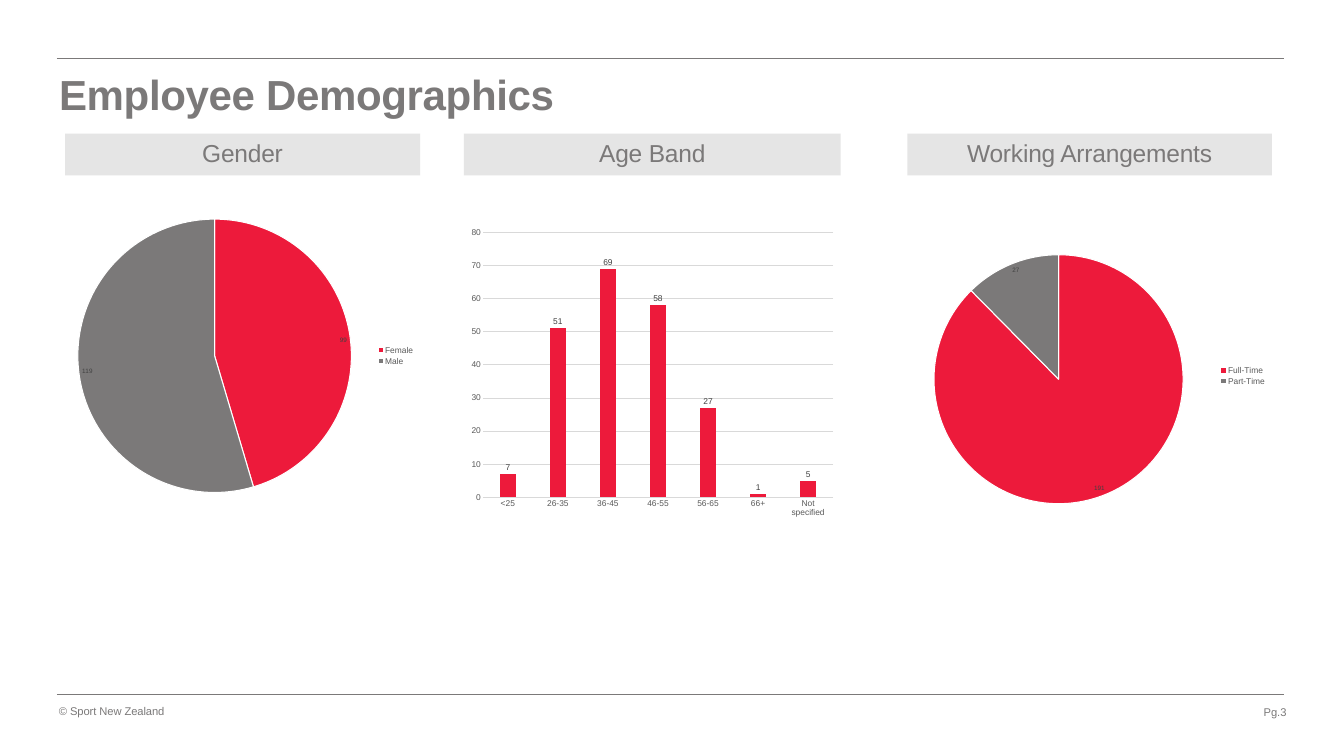
from pptx import Presentation
from pptx.chart.data import CategoryChartData
from pptx.dml.color import RGBColor
from pptx.enum.chart import XL_CHART_TYPE as Chart, XL_LABEL_POSITION as LabelAt
from pptx.enum.chart import XL_LEGEND_POSITION as LegendAt, XL_TICK_MARK as Tick
from pptx.enum.shapes import MSO_CONNECTOR as Connector, MSO_SHAPE as Shape
from pptx.enum.text import MSO_ANCHOR as Anchor, MSO_AUTO_SIZE as AutoSize, PP_ALIGN as Align
from pptx.oxml import parse_xml
from pptx.oxml.ns import nsdecls, qn
from pptx.util import Inches, Pt

GREY, RED, BAND, RULE = "7B7979", "ED1A3B", "E5E5E5", "D9D9D9"
AXIS_TEXT, LABEL_TEXT, WHITE = "595959", "404040", "FFFFFF"


def paint(target, color, width=None):
    """Colour a font, or a fill or line; a width applies to lines."""
    if hasattr(target, "solid"):
        target.solid()
        target.fore_color.rgb = RGBColor.from_string(color)
    else:
        target.color.rgb = RGBColor.from_string(color)
    if width:
        target.width = Pt(width)


def write(frame, text, size, bold=False, align=Align.LEFT, tracking=0,
          line=None, after=None, anchor=Anchor.TOP):
    """Put one formatted paragraph in a text frame."""
    frame.word_wrap = True
    frame.auto_size = AutoSize.NONE
    frame.vertical_anchor = anchor
    paragraph = frame.paragraphs[0]
    paragraph.alignment = align
    paragraph.line_spacing = line
    paragraph.space_after = after
    run = paragraph.add_run()
    run.text = text
    run.font.name, run.font.size, run.font.bold = "Arial", Pt(size), bold
    paint(run.font, GREY)
    if tracking:
        run._r.get_or_add_rPr().set("spc", str(tracking))


deck = Presentation()
deck.slide_width, deck.slide_height = Inches(26.65), Inches(15)
slide = deck.slides.add_slide(deck.slide_layouts[5])
shapes = slide.shapes

# Page margins and the three content columns (left, width)
margin, rule_left, rule_right = 1.07, 1.13, 25.46
columns = [(1.29, 7.04), (9.2, 7.47), (17.99, 7.23)]
heading_top, heading_height = 2.65, 0.83

# Rules above the title and above the footer
for rule_y in (1.15, 13.78):
    rule = shapes.add_connector(Connector.STRAIGHT, Inches(rule_left), Inches(rule_y),
                                Inches(rule_right), Inches(rule_y))
    paint(rule.line, GREY, 0.5)
    rule._element.spPr.append(parse_xml(f"<a:effectLst {nsdecls('a')}/>"))

# Title
title = shapes.title
title.left, title.top, title.width, title.height = map(Inches, (margin, 1.13, 13.21, 1.58))
write(title.text_frame, "Employee Demographics", 60, bold=True, tracking=-50,
      line=0.9, anchor=Anchor.MIDDLE)

# Footer
for text, left, top, width, align, tracking in [
        ("© Sport New Zealand", margin, 13.93, 2.45, Align.LEFT, -10),
        ("Pg.3", 24.6, 13.95, 1.01, Align.RIGHT, 0)]:
    footer = shapes.add_textbox(Inches(left), Inches(top), Inches(width), Inches(0.45))
    write(footer.text_frame, text, 16, align=align, tracking=tracking)

# Column headings
for heading, (left, width) in zip(("Gender", "Age Band", "Working Arrangements"), columns):
    band = shapes.add_shape(Shape.RECTANGLE, Inches(left), Inches(heading_top),
                            Inches(width), Inches(heading_height))
    band.shadow.inherit = False
    paint(band.fill, BAND)
    band.line.fill.background()
    write(band.text_frame, heading, 35, align=Align.CENTER, tracking=-30,
          line=Pt(45), after=Pt(14))

# Charts: the first starts at the margin, the others at their columns
gender_width = sum(columns[0]) - margin
demographics = [
    (Chart.PIE, {"Female": 99, "Male": 119}, (margin, 4.21, gender_width, 5.7), None),
    (Chart.COLUMN_CLUSTERED,
     {"<25": 7, "26-35": 51, "36-45": 69, "46-55": 58, "56-65": 27, "66+": 1,
      "Not specified": 5},
     (columns[1][0], 4.4, columns[1][1], 5.98), None),
    (Chart.PIE, {"Full-Time": 191, "Part-Time": 27},
     (columns[2][0], 4.21, columns[2][1], 6.5), (0.07, 0.13, 0.69, 0.76)),
]
for kind, counts, place, plot_area in demographics:
    is_pie = kind == Chart.PIE
    data = CategoryChartData()
    data.categories = list(counts)
    data.add_series("Series 1", list(counts.values()))
    chart = shapes.add_chart(kind, *map(Inches, place), data).chart
    chart.has_title = False
    chart.font.name, chart.font.size = "Arial", Pt(10 if is_pie else 12)
    chart.has_legend = is_pie
    plot = chart.plots[0]
    plot.vary_by_categories = is_pie
    series = plot.series[0]

    # Value labels
    labels = series.data_labels
    labels.show_value = True
    labels.position = LabelAt.INSIDE_END if is_pie else LabelAt.OUTSIDE_END
    labels.font.name, labels.font.size = "Arial", Pt(9 if is_pie else 12)
    paint(labels.font, LABEL_TEXT)

    if is_pie:
        for index, color in enumerate((RED, GREY)):
            slice_format = series.points[index].format
            paint(slice_format.fill, color)
            paint(slice_format.line, WHITE, 1.5)
        legend = chart.legend
        legend.position, legend.include_in_layout = LegendAt.RIGHT, False
        legend.font.name, legend.font.size = "Arial", Pt(12)
        paint(legend.font, AXIS_TEXT)
    else:
        paint(series.format.fill, RED)
        plot.gap_width, plot.overlap = 219, -27
        for axis in (chart.category_axis, chart.value_axis):
            axis.major_tick_mark = axis.minor_tick_mark = Tick.NONE
            axis.tick_labels.font.name, axis.tick_labels.font.size = "Arial", Pt(12)
            paint(axis.tick_labels.font, AXIS_TEXT)
        paint(chart.category_axis.format.line, RULE, 0.75)
        counts_axis = chart.value_axis
        counts_axis.minimum_scale, counts_axis.maximum_scale = 0, 80
        counts_axis.major_unit = 10
        counts_axis.format.line.fill.background()
        paint(counts_axis.major_gridlines.format.line, RULE, 0.75)

    # Fixed inner plot area, as shares of the chart
    if plot_area:
        area = chart._chartSpace.chart.plotArea
        for old_layout in area.findall(qn("c:layout")):
            area.remove(old_layout)
        shares = "".join(f'<c:{tag} val="{share}"/>'
                         for tag, share in zip("xywh", plot_area))
        area.insert(0, parse_xml(
            f'<c:layout {nsdecls("c")}><c:manualLayout><c:layoutTarget val="inner"/>'
            f'<c:xMode val="edge"/><c:yMode val="edge"/>{shares}'
            '</c:manualLayout></c:layout>'))

deck.save("out.pptx")
